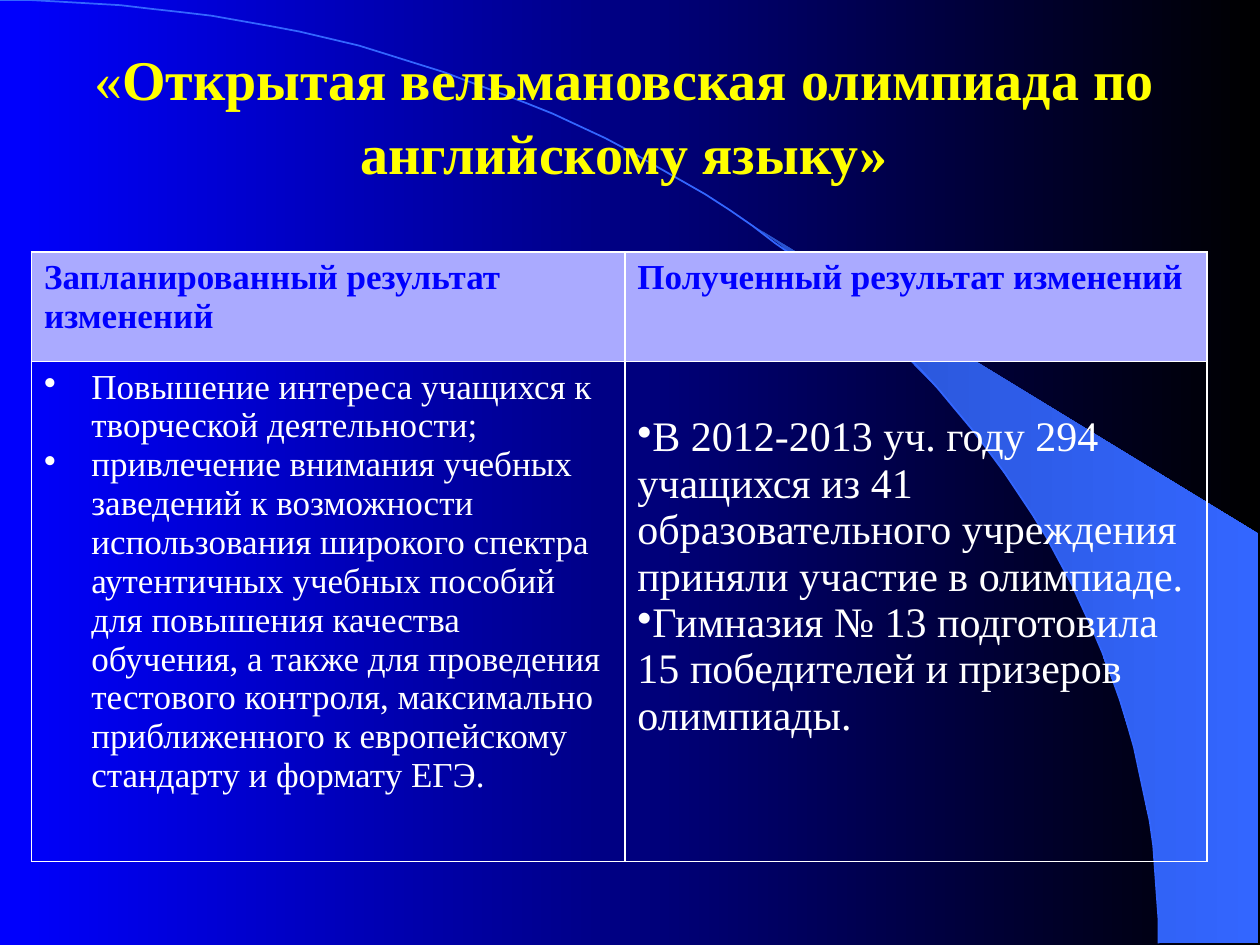
"""Build the olympiad results slide: curved backdrop, title and two-column table."""
import math

import pptx
import pptx.dml.color
import pptx.enum.text
import pptx.oxml
import pptx.oxml.ns
import pptx.util

Pt = pptx.util.Pt
COLORS = {
    "blue": "0000FF",
    "black": "000000",
    "sweep_dark": "2851CC",
    "sweep": "3366FF",
    "title": "FFFF00",
    "header_fill": "AAAAFF",
    "white": "FFFFFF",
}
FONT = "Times New Roman"
ARC_WIDTH, ARC_HEIGHT = 662.4, 539.3
TITLE = [("«", False), ("Открытая вельмановская олимпиада по английскому языку»", True)]
HEADERS = ["Запланированный результат изменений", "Полученный результат изменений"]
PLANNED = [
    "Повышение интереса учащихся к творческой деятельности;",
    "привлечение внимания учебных заведений к возможности использования "
    "широкого спектра аутентичных учебных пособий для повышения качества "
    "обучения, а также для проведения тестового контроля, максимально "
    "приближенного к европейскому стандарту и формату ЕГЭ.",
]
ACHIEVED = [
    "В 2012-2013 уч. году 294 учащихся из 41 образовательного учреждения "
    "приняли участие в олимпиаде.",
    "Гимназия № 13 подготовила 15 победителей и призеров олимпиады.",
]


def rgb(name):
    return pptx.dml.color.RGBColor.from_string(COLORS[name])


def apply_format(target, values):
    for name, value in values.items():
        setattr(target, name, value)


def add_run(paragraph, text, size, color, bold=False):
    run = paragraph.add_run()
    run.text = text
    apply_format(run.font, {"name": FONT, "size": Pt(size), "bold": bold})
    run.font.color.rgb = rgb(color)


def set_gradient(fill, start, end):
    fill.gradient()
    fill.gradient_angle = 0
    for stop, color, position in zip(fill.gradient_stops, (start, end), (0, 1)):
        stop.color.rgb = rgb(color)
        stop.position = position


def arc_points(start, end, steps=60):
    angles = [math.radians(start + (end - start) * i / steps) for i in range(steps + 1)]
    return [(ARC_WIDTH * math.sin(a), ARC_HEIGHT * (1 - math.cos(a))) for a in angles]


def add_outline(slide, points, close):
    builder = slide.shapes.build_freeform(*points[0], scale=Pt(1))
    builder.add_line_segments(points[1:], close=close)
    shape = builder.convert_to_shape()
    shape.shadow.inherit = False
    return shape


def add_backdrop(slide):
    set_gradient(slide.background.fill, "blue", "black")
    corner = [(719.3, 539.3), (719.3, 304.6)]
    sweep = add_outline(slide, arc_points(39.8, 90) + corner, True)
    set_gradient(sweep.fill, "sweep_dark", "sweep")
    sweep.line.fill.background()
    arc = add_outline(slide, arc_points(0, 90), False)
    arc.fill.background()
    arc.line.color.rgb = rgb("sweep")
    arc.line.width = Pt(1)


def add_title(slide):
    box = slide.shapes.add_textbox(Pt(23.8), Pt(18), Pt(666), Pt(85))
    box.text_frame.word_wrap = True
    paragraph = box.text_frame.paragraphs[0]
    apply_format(paragraph, {"alignment": pptx.enum.text.PP_ALIGN.CENTER, "line_spacing": 1.1})
    for text, bold in TITLE:
        add_run(paragraph, text, 32, "title", bold)


def add_bullet(paragraph, indent):
    properties = paragraph._p.get_or_add_pPr()
    properties.set("marL", str(Pt(indent)))
    properties.set("indent", str(-Pt(indent)))
    bullet = pptx.oxml.parse_xml(f'<a:buChar {pptx.oxml.ns.nsdecls("a")} char="•"/>')
    properties.append(bullet)


def set_borders(cell):
    properties = cell._tc.get_or_add_tcPr()
    for index, side in enumerate(("lnL", "lnR", "lnT", "lnB")):
        border = pptx.oxml.parse_xml(
            f'<a:{side} {pptx.oxml.ns.nsdecls("a")} w="{Pt(1)}"><a:solidFill>'
            f'<a:srgbClr val="{COLORS["white"]}"/></a:solidFill></a:{side}>'
        )
        properties.insert(index, border)


def fill_header(cell, text):
    cell.fill.solid()
    cell.fill.fore_color.rgb = rgb("header_fill")
    add_run(cell.text_frame.paragraphs[0], text, 20, "blue", True)
    set_borders(cell)


def fill_list(cell, items, size, indent, margin_top):
    cell.fill.background()
    cell.margin_top = Pt(margin_top)
    frame = cell.text_frame
    for index, text in enumerate(items):
        paragraph = frame.add_paragraph() if index else frame.paragraphs[0]
        add_bullet(paragraph, indent)
        add_run(paragraph, text, size, "white")
    set_borders(cell)


def add_results_table(slide):
    widths, heights = (339.1, 332.6), (62.6, 285.8)
    frame = slide.shapes.add_table(2, 2, Pt(18), Pt(144), Pt(sum(widths)), Pt(sum(heights)))
    table = frame.table
    for column, width in zip(table.columns, widths):
        column.width = Pt(width)
    for row, height in zip(table.rows, heights):
        row.height = Pt(height)
    for index, text in enumerate(HEADERS):
        fill_header(table.cell(0, index), text)
    fill_list(table.cell(1, 0), PLANNED, 20, 27, 3.6)
    fill_list(table.cell(1, 1), ACHIEVED, 24, 0, 30.2)


def main():
    presentation = pptx.Presentation()
    apply_format(presentation, {"slide_width": Pt(720), "slide_height": Pt(540)})
    slide = presentation.slides.add_slide(presentation.slide_layouts[6])
    add_backdrop(slide)
    add_title(slide)
    add_results_table(slide)
    presentation.save("out.pptx")


if __name__ == "__main__":
    main()
